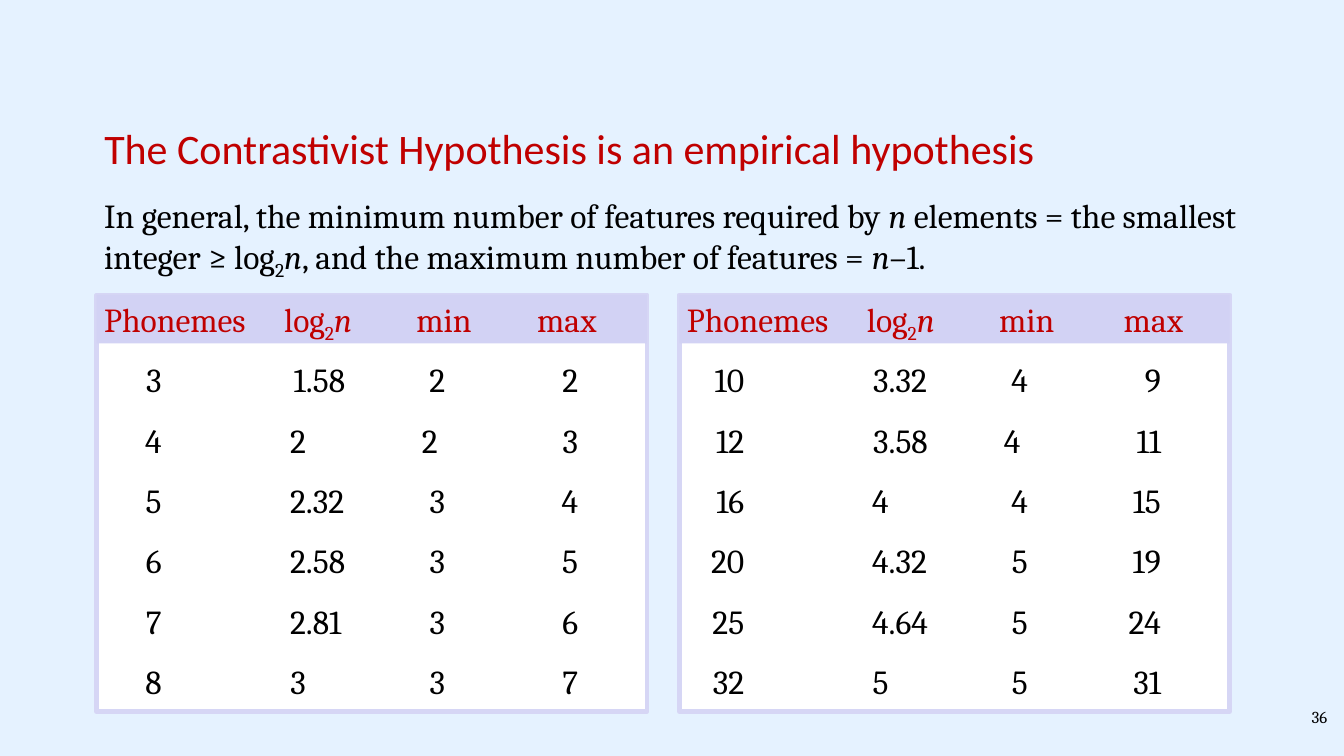
from lxml.etree import SubElement
from pptx import Presentation
from pptx.dml.color import RGBColor
from pptx.enum.shapes import MSO_SHAPE
from pptx.enum.text import MSO_ANCHOR, MSO_AUTO_SIZE, PP_ALIGN
from pptx.oxml.ns import qn
from pptx.util import Cm, Pt

BLACK, RED, WHITE = "000000", "C00000", "FFFFFF"
BACKGROUND, BORDER, HEADER = "E5F2FF", "D6D6F5", "D2D2F4"
PANEL_WIDTH, PANEL_HEIGHT = 18.49, 14
ROW_HEIGHT, ROW_PITCH, FIRST_ROW = 1.63, 2.03, 2.03
ROW_TABS = [1.93, 6.78, 11.46, 15.93]
LOG_N = [("log", ""), ("2", "subscript"), ("n", "italic")]
SMALL_INVENTORIES = [
    "\t3\t1.58\t2\t2", "\t4\t2\t2 \t3", "\t5\t2.32\t3\t4",
    "\t6\t2.58\t3\t5", "\t7\t2.81\t3\t6", "\t8\t3\t3\t7",
]
LARGE_INVENTORIES = [
    "\t10\t3.32\t4\t9", "\t12\t3.58\t4 \t11", "\t16\t4\t4\t15",
    "\t20\t4.32\t5\t19", "\t25\t4.64\t5\t24", "\t32\t5\t5\t31",
]


def color(hex_string):
    """Return the colour for a hex string."""
    return RGBColor.from_string(hex_string)


def lengths(*values):
    """Return the values as centimetre lengths."""
    return [Cm(value) for value in values]


def write_text(shape, parts, size=32, font="Cambria", fill=BLACK,
               align=PP_ALIGN.LEFT, tabs=(), tab_kind="l"):
    """Write (text, style) parts as one formatted paragraph in a shape."""
    frame = shape.text_frame
    frame.word_wrap = True
    frame.auto_size = MSO_AUTO_SIZE.NONE
    frame.vertical_anchor = MSO_ANCHOR.TOP
    paragraph = frame.paragraphs[0]
    paragraph.alignment = align
    if tabs:
        tab_list = SubElement(paragraph._p.get_or_add_pPr(), qn("a:tabLst"))
        for position in tabs:
            SubElement(tab_list, qn("a:tab"), pos=str(Cm(position)), algn=tab_kind)
    for text, style in parts:
        run = paragraph.add_run()
        run.text = text
        run.font.size = Pt(size)
        run.font.name = font
        run.font.color.rgb = color(fill)
        run.font.italic = style == "italic"
        if style == "subscript":
            run._r.get_or_add_rPr().set("baseline", "-25000")


def add_text(slide, box, parts, **formatting):
    """Add a text box at a (left, top, width, height) box."""
    write_text(slide.shapes.add_textbox(*lengths(*box)), parts, **formatting)


def add_rectangle(slide, box, fill, line=None):
    """Add a flat rectangle with an optional border colour."""
    shape = slide.shapes.add_shape(MSO_SHAPE.RECTANGLE, *lengths(*box))
    shape.shadow.inherit = False
    shape.fill.solid()
    shape.fill.fore_color.rgb = color(fill)
    if line:
        shape.line.color.rgb = color(line)
        shape.line.width = Pt(4.5)
    else:
        shape.line.fill.background()
    return shape


def add_heading(slide, left, top):
    """Place the title and the general rule beneath it."""
    title = slide.shapes.title
    title.left, title.top, title.width, title.height = lengths(left, top, 32.08, 1.96)
    write_text(title, [("The Contrastivist Hypothesis is an empirical hypothesis", "")],
               size=40, font="Calibri", fill=RED)
    rule = [
        ("In general, the minimum number of features required by ", ""),
        ("n", "italic"), (" elements = the smallest integer ≥ ", ""), *LOG_N,
        (", and the maximum number of features = ", ""), ("n", "italic"), ("–1.", ""),
    ]
    add_text(slide, (left, top + 2.44, 40, 3), rule)


def add_panel(slide, left, top, rows, max_tab):
    """Place a bordered panel with a header and tab-aligned rows."""
    add_rectangle(slide, (left, top, PANEL_WIDTH, PANEL_HEIGHT), WHITE, BORDER)
    header = add_rectangle(slide, (left, top, PANEL_WIDTH, ROW_HEIGHT), HEADER)
    write_text(header, [("Phonemes\t", ""), *LOG_N, ("\tmin\tmax", "")],
               fill=RED, tabs=[6.05, 10.49, max_tab])
    for index, row in enumerate(rows):
        row_top = top + FIRST_ROW + index * ROW_PITCH
        add_text(slide, (left, row_top, PANEL_WIDTH, ROW_HEIGHT), [(row, "")],
                 tabs=ROW_TABS, tab_kind="dec")


def main():
    """Build and save the presentation."""
    presentation = Presentation()
    presentation.slide_width, presentation.slide_height = lengths(45.16, 25.4)
    slide = presentation.slides.add_slide(presentation.slide_layouts[5])
    slide.background.fill.solid()
    slide.background.fill.fore_color.rgb = color(BACKGROUND)
    add_heading(slide, 3.25, 3.99)
    add_panel(slide, 3.25, 9.91, SMALL_INVENTORIES, max_tab=14.55)
    add_panel(slide, 22.83, 9.91, LARGE_INVENTORIES, max_tab=14.68)
    add_text(slide, (39.57, 23.62, 5.28, 1.27), [("36", "")],
             size=16, align=PP_ALIGN.RIGHT)
    presentation.save("out.pptx")


if __name__ == "__main__":
    main()
